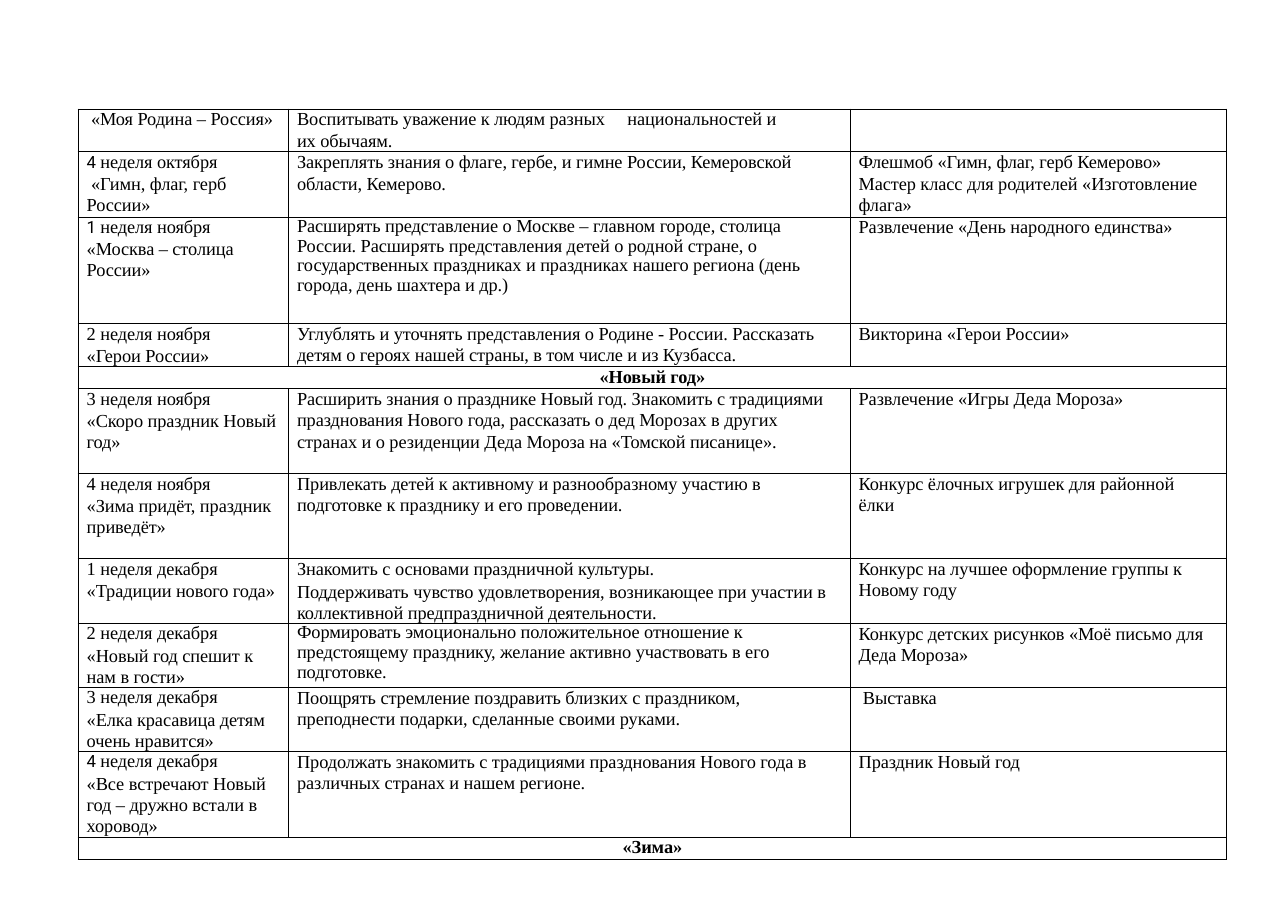
from lxml import etree
from pptx import Presentation
from pptx import util as u
from pptx.dml import color
from pptx.enum import text as t
from pptx.oxml import ns

COLORS = {"ink": "000000", "border": "000000"}
BODY_FONT, DIGIT_FONT = "Times New Roman", "Roboto"
INDENT, WIDE_INDENT = u.Cm(0.2), u.Cm(0.3)
COLUMN_WIDTHS = (4.85, 12.95, 8.69)
TIGHT = 0.96  # line spacing of the denser goals

# Row height, week, theme, goal, event; "\v" is a line break, "\n" a new paragraph
WEEKS_OF_HOMELAND = [
    (0.99, "", "«Моя Родина – Россия»",
     "Воспитывать уважение к людям разных\tнациональностей и\vих обычаям.", "", {}),
    (1.5, "4 неделя октября", "«Гимн, флаг, герб России»",
     "Закреплять знания о флаге, гербе, и гимне России, Кемеровской\vобласти, Кемерово.",
     "Флешмоб «Гимн, флаг, герб Кемерово»\vМастер класс для родителей «Изготовление флага»",
     {"digit_font": DIGIT_FONT, "theme_first_line": u.Cm(0.1)}),
    (2.46, "1 неделя ноября", "«Москва – столица России»",
     "Расширять представление о Москве – главном городе, столица\vРоссии. Расширять "
     "представления детей о родной стране, о государственных праздниках и праздниках "
     "нашего региона (день\vгорода, день шахтера и др.)",
     "Развлечение «День народного единства»",
     {"digit_font": DIGIT_FONT, "goal_spacing": TIGHT}),
    (0.99, "2 неделя ноября", "«Герои России»",
     "Углублять и уточнять представления о Родине - России. Рассказать детям о героях "
     "нашей страны, в том числе и из Кузбасса.",
     "Викторина «Герои России»", {}),
]
WEEKS_OF_NEW_YEAR = [
    (1.96, "3 неделя ноября", "«Скоро праздник Новый год»",
     "Расширить знания о празднике Новый год. Знакомить с традициями празднования Нового "
     "года, рассказать о дед Морозах в других\vстранах и о резиденции Деда Мороза на "
     "«Томской писанице».",
     "Развлечение «Игры Деда Мороза»", {}),
    (1.96, "4 неделя ноября", "«Зима придёт, праздник приведёт»",
     "Привлекать детей к активному и разнообразному участию в\vподготовке к празднику и "
     "его проведении.",
     "Конкурс ёлочных игрушек для районной\vёлки", {}),
    (1.47, "1 неделя декабря", "«Традиции нового года»",
     "Знакомить с основами праздничной культуры.\nПоддерживать чувство удовлетворения, "
     "возникающее при участии в коллективной предпраздничной деятельности.",
     "Конкурс на лучшее оформление группы к Новому году", {}),
    (1.47, "2 неделя декабря", "«Новый год спешит к\vнам в гости»",
     "Формировать эмоционально положительное отношение к\vпредстоящему празднику, желание "
     "активно участвовать в его подготовке.",
     "Конкурс детских рисунков «Моё письмо для Деда Мороза»", {"goal_spacing": TIGHT}),
    (1.47, "3 неделя декабря", "«Елка красавица детям очень нравится»",
     "Поощрять стремление поздравить близких с праздником,\vпреподнести подарки, сделанные "
     "своими руками.",
     "Выставка", {"event_indent": WIDE_INDENT}),
    (1.98, "4 неделя декабря", "«Все встречают Новый год – дружно встали в хоровод»",
     "Продолжать знакомить с традициями празднования Нового года в различных странах и "
     "нашем регионе.",
     "Праздник Новый год", {"digit_font": DIGIT_FONT}),
]
HEADING_HEIGHT = 0.51
PLAN = [*WEEKS_OF_HOMELAND, "«Новый год»", *WEEKS_OF_NEW_YEAR, "«Зима»"]


def add_run(paragraph, words, font=BODY_FONT, size=12, bold=False):
    run = paragraph.add_run()
    run.text = words
    run.font.name, run.font.size, run.font.bold = font, u.Pt(size), bold
    run.font.color.rgb = color.RGBColor.from_string(COLORS["ink"])
    run._r.get_or_add_rPr().set("spc", "-5")


def write(paragraph, words, indent=INDENT, first_line=0, spacing=u.Pt(13.8), before=0,
          align=t.PP_ALIGN.LEFT, bold=False, digit_font=None):
    """Fill one paragraph; digit_font applies to the leading week number."""
    props = paragraph._p.get_or_add_pPr()
    props.set("marL", str(indent))
    props.set("indent", str(first_line))
    if "\t" in words:
        tabs = etree.SubElement(props, ns.qn("a:tabLst"))
        etree.SubElement(tabs, ns.qn("a:tab"), pos=str(u.Cm(7.85)), algn="l")
    paragraph.alignment = align
    paragraph.line_spacing = spacing
    paragraph.space_before = u.Pt(before)
    if digit_font:
        add_run(paragraph, words[:2], font=digit_font, size=11)
        words = words[2:]
    for number, line in enumerate(words.split("\v")):
        if number:
            paragraph.add_line_break()
        if line:
            add_run(paragraph, line, bold=bold)


def prepare_cell(cell):
    """Plain cell with no margins and a thin border on every side."""
    cell.margin_left = cell.margin_right = cell.margin_top = cell.margin_bottom = 0
    props = cell._tc.get_or_add_tcPr()
    for side in ("lnL", "lnR", "lnT", "lnB"):
        border = etree.SubElement(props, ns.qn(f"a:{side}"), w=str(u.Pt(0.5)))
        fill = etree.SubElement(border, ns.qn("a:solidFill"))
        etree.SubElement(fill, ns.qn("a:srgbClr"), val=COLORS["border"])
    cell.fill.background()


def fill_heading(cells, heading):
    cells[0].merge(cells[-1])
    write(cells[0].text_frame.paragraphs[0], heading, indent=0, spacing=u.Pt(13.4),
          align=t.PP_ALIGN.CENTER, bold=True)


def fill_week(cells, week, theme, goal, event, digit_font=None, theme_first_line=0,
              goal_spacing=u.Pt(13.8), event_indent=INDENT):
    week_frame, goal_frame, event_frame = (cell.text_frame for cell in cells)
    # Week and theme
    if week:
        write(week_frame.paragraphs[0], week, spacing=u.Pt(13.5), digit_font=digit_font)
        write(week_frame.add_paragraph(), theme, first_line=theme_first_line, before=0.7)
    else:
        write(week_frame.paragraphs[0], theme, indent=WIDE_INDENT)
    # Goal
    first, *others = goal.split("\n")
    write(goal_frame.paragraphs[0], first, spacing=goal_spacing)
    for other in others:
        write(goal_frame.add_paragraph(), other, before=0.7)
    # Event
    write(event_frame.paragraphs[0], event, indent=event_indent)


def add_plan(slide, left, top):
    heights = [HEADING_HEIGHT if isinstance(row, str) else row[0] for row in PLAN]
    plan = slide.shapes.add_table(
        len(PLAN), len(COLUMN_WIDTHS), u.Cm(left), u.Cm(top),
        u.Cm(sum(COLUMN_WIDTHS)), u.Cm(sum(heights))).table
    plan.first_row = plan.horz_banding = False
    for column, width in zip(plan.columns, COLUMN_WIDTHS):
        column.width = u.Cm(width)
    for row, height, entry in zip(plan.rows, heights, PLAN):
        row.height = u.Cm(height)
        cells = list(row.cells)
        for cell in cells:
            prepare_cell(cell)
        if isinstance(entry, str):
            fill_heading(cells, entry)
        else:
            _, week, theme, goal, event, options = entry
            fill_week(cells, week, theme, goal, event, **options)


def main():
    deck = Presentation()
    deck.slide_width, deck.slide_height = u.Cm(29.7), u.Cm(21)
    slide = deck.slides.add_slide(deck.slide_layouts[6])
    add_plan(slide, left=1.8, top=2.51)
    deck.save("out.pptx")


if __name__ == "__main__":
    main()
